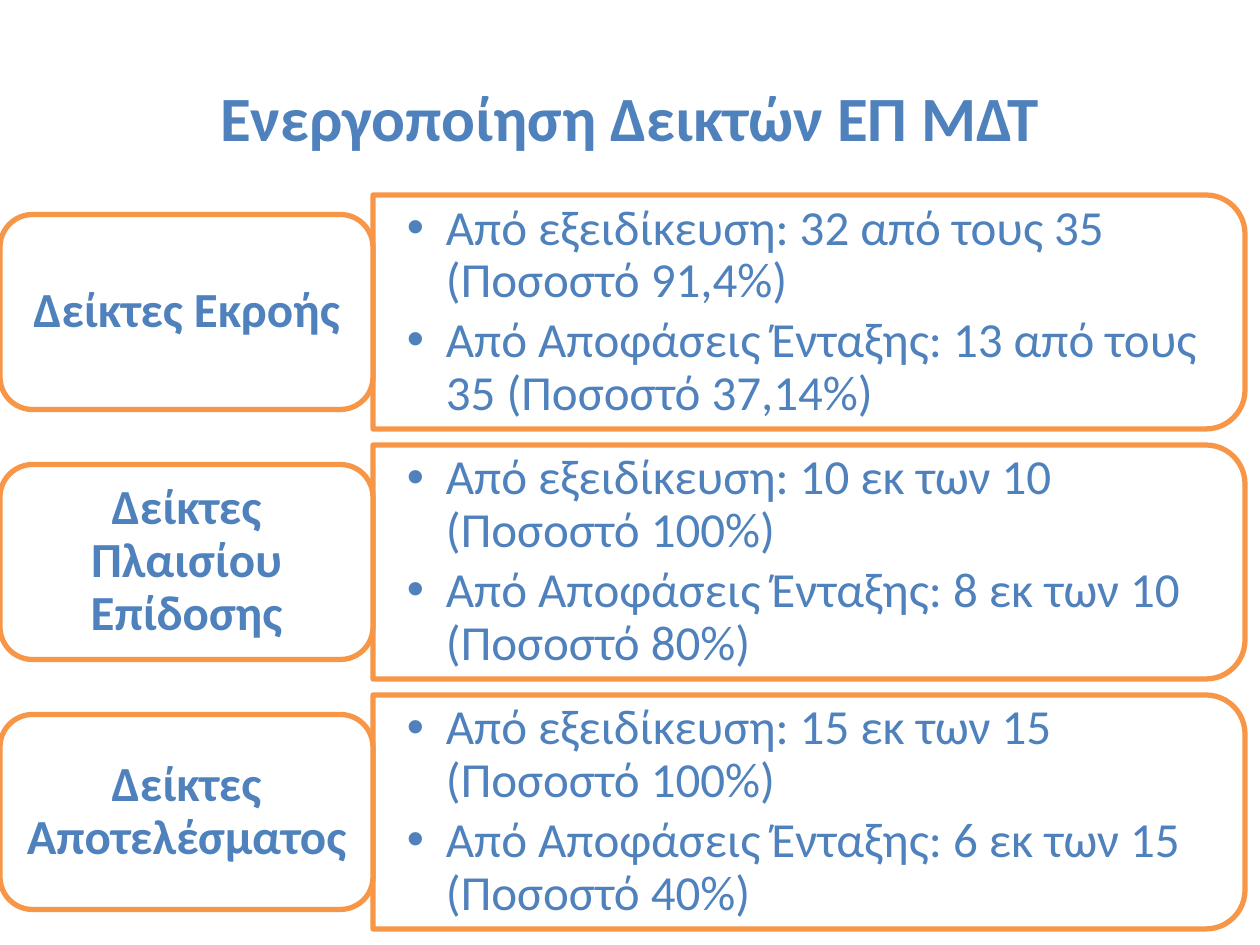
from lxml.etree import SubElement
from pptx import Presentation
from pptx.dml.color import RGBColor
from pptx.enum.shapes import MSO_SHAPE as Preset
from pptx.enum.text import MSO_ANCHOR as Anchor, PP_ALIGN as Align
from pptx.oxml.ns import qn
from pptx.util import Emu, Pt

TITLE = "Ενεργοποίηση Δεικτών ΕΠ ΜΔΤ"
INDICATORS = [
    ("Δείκτες Εκροής", [
        "Από εξειδίκευση: 32 από τους 35 (Ποσοστό 91,4%)",
        "Από Αποφάσεις Ένταξης: 13 από τους 35 (Ποσοστό 37,14%)",
    ]),
    ("Δείκτες Πλαισίου Επίδοσης", [
        "Από εξειδίκευση: 10 εκ των 10 (Ποσοστό 100%)",
        "Από Αποφάσεις Ένταξης: 8 εκ των 10 (Ποσοστό 80%)",
    ]),
    ("Δείκτες Αποτελέσματος", [
        "Από εξειδίκευση: 15 εκ των 15 (Ποσοστό 100%)",
        "Από Αποφάσεις Ένταξης: 6 εκ των 15 (Ποσοστό 40%)",
    ]),
]

BLUE, ORANGE, WHITE = "4F81BD", "F79646", "FFFFFF"
FONT = "Calibri"
ROW_TOP, ROW_PITCH = 195, 250
LABEL_WIDTH, LABEL_HEIGHT = 373, 195
PANEL_WIDTH, PANEL_HEIGHT = 872, 234
PANEL_TEXT_WIDTH, PANEL_TEXT_HEIGHT = 861, 212
BULLET_INDENT = 39


def px(length):
    return Emu(round(length * 914400 / 126))


def color(value):
    return RGBColor.from_string(value)


def add_box(slide, preset, left, top, width, height):
    shape = slide.shapes.add_shape(preset, px(left), px(top), px(width), px(height))
    shape.shadow.inherit = False
    shape.fill.solid()
    shape.fill.fore_color.rgb = color(WHITE)
    shape.line.color.rgb = color(ORANGE)
    shape.line.width = Pt(3)
    return shape


def add_text_box(slide, left, top, width, height):
    return slide.shapes.add_textbox(px(left), px(top), px(width), px(height))


def add_bullet(paragraph):
    properties = paragraph._p.get_or_add_pPr()
    properties.set("marL", str(px(BULLET_INDENT)))
    properties.set("indent", str(-px(BULLET_INDENT)))
    SubElement(properties, qn("a:buFont"), typeface="Arial")
    SubElement(properties, qn("a:buChar"), char="•")


def write(shape, texts, size, inset, bold=False, bullets=False, spacing=0.9):
    frame = shape.text_frame
    frame.word_wrap = True
    frame.vertical_anchor = Anchor.MIDDLE
    frame.margin_left = frame.margin_right = px(inset[0])
    frame.margin_top = frame.margin_bottom = px(inset[1])
    for index, text in enumerate(texts):
        paragraph = frame.add_paragraph() if index else frame.paragraphs[0]
        if bullets:
            add_bullet(paragraph)
        paragraph.alignment = Align.LEFT if bullets else Align.CENTER
        paragraph.line_spacing = spacing
        if index:
            paragraph.space_before = Pt(4)
        run = paragraph.add_run()
        run.text = text
        run.font.name = FONT
        run.font.size = Pt(size)
        run.font.bold = bold
        run.font.color.rgb = color(BLUE)


def add_indicator(slide, top, label, results):
    middle = top + PANEL_HEIGHT / 2
    center = LABEL_WIDTH + PANEL_WIDTH / 2
    panel = add_box(slide, Preset.ROUND_2_SAME_RECTANGLE,
                    center - PANEL_HEIGHT / 2, middle - PANEL_WIDTH / 2,
                    PANEL_HEIGHT, PANEL_WIDTH)
    panel.rotation = 90
    panel_text = add_text_box(slide, LABEL_WIDTH, middle - PANEL_TEXT_HEIGHT / 2,
                              PANEL_TEXT_WIDTH, PANEL_TEXT_HEIGHT)
    write(panel_text, results, 28, (34, 18), bullets=True)
    label_box = add_box(slide, Preset.ROUNDED_RECTANGLE, 0, middle - LABEL_HEIGHT / 2,
                        LABEL_WIDTH, LABEL_HEIGHT)
    write(label_box, [label], 28, (15, 8), bold=True)


def main():
    presentation = Presentation()
    presentation.slide_width = px(1260)
    presentation.slide_height = px(945)
    slide = presentation.slides.add_slide(presentation.slide_layouts[6])
    title = add_text_box(slide, 63, 38, 1134, 157)
    write(title, [TITLE], 36, (13, 6), bold=True, spacing=1.0)
    for row, (label, results) in enumerate(INDICATORS):
        add_indicator(slide, ROW_TOP + row * ROW_PITCH, label, results)
    presentation.save("out.pptx")


if __name__ == "__main__":
    main()
